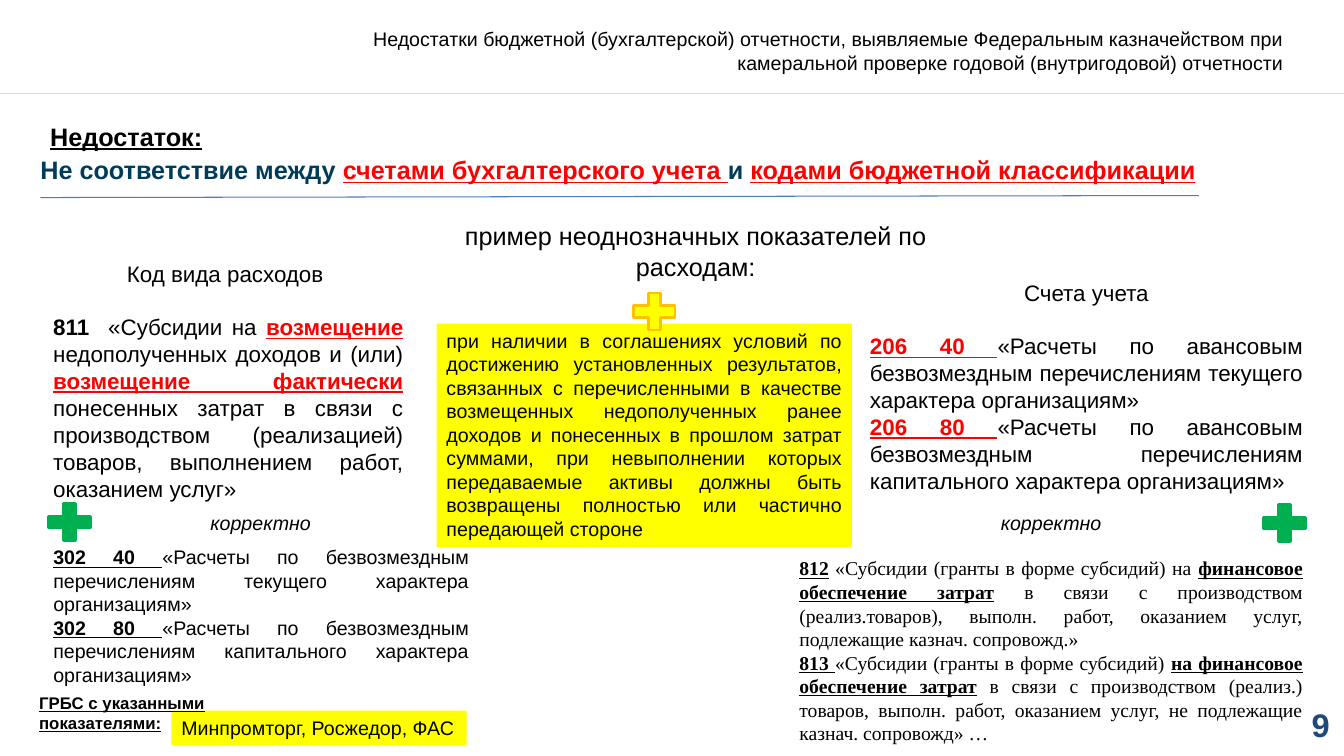
from lxml import etree
from pptx import Presentation
from pptx.dml.color import RGBColor
from pptx.enum import shapes, text
from pptx.oxml import ns
from pptx.util import Inches, Pt

COLORS = {"ink": "000000", "navy": "003B5A", "red": "FF0000", "number": "1F497D",
          "rule": "D9D9D9", "underline": "4B7EBC", "green": "00B050",
          "yellow": "FFFF00", "amber": "FFC000"}
# Run style: colour, bold, underline, italic
STYLES = {"plain": ("ink", False, False, False),
          "key": ("ink", True, True, False),
          "bold": ("ink", True, False, False),
          "red": ("red", True, True, False),
          "navy": ("navy", True, False, False),
          "number": ("number", True, False, False),
          "note": ("ink", False, False, True)}
LEFT, CENTER, RIGHT, JUSTIFY = (text.PP_ALIGN.LEFT, text.PP_ALIGN.CENTER,
                                text.PP_ALIGN.RIGHT, text.PP_ALIGN.JUSTIFY)


def color(name):
    return RGBColor.from_string(COLORS[name])


def place(shape, left, top, width, height):
    shape.left, shape.top = Inches(left), Inches(top)
    shape.width, shape.height = Inches(width), Inches(height)


def write(frame, paragraphs, size, align=LEFT, font="Arial", inset=True):
    """Fill a frame; each paragraph is a list of (words, style) pairs."""
    frame.word_wrap = True
    frame.auto_size = text.MSO_AUTO_SIZE.NONE
    frame.vertical_anchor = text.MSO_ANCHOR.TOP
    if not inset:
        frame.margin_left = frame.margin_right = 0
        frame.margin_top = frame.margin_bottom = 0
    for index, pieces in enumerate(paragraphs):
        paragraph = frame.paragraphs[0] if index == 0 else frame.add_paragraph()
        paragraph.alignment = align
        for words, style in pieces:
            run = paragraph.add_run()
            run.text = words
            tint, bold, underline, italic = STYLES[style]
            run.font.name, run.font.size = font, Pt(size)
            run.font.bold, run.font.underline, run.font.italic = bold, underline, italic
            run.font.color.rgb = color(tint)


def add_text(slide, box, paragraphs, size, **options):
    frame = slide.shapes.add_textbox(*map(Inches, box)).text_frame
    write(frame, paragraphs, size, **options)
    return frame


def add_headed_text(slide, box, heading, paragraphs):
    """Centred heading, a gap of one line, then justified paragraphs."""
    frame = add_text(slide, box, [[(heading, "plain")], *paragraphs], 16, align=JUSTIFY)
    frame.paragraphs[0].alignment = CENTER
    frame.paragraphs[1].space_before = Pt(19)


def add_highlight(slide, box, words, align=LEFT):
    panel = slide.shapes.add_shape(shapes.MSO_SHAPE.RECTANGLE, *map(Inches, box))
    panel.shadow.inherit = False
    panel.fill.solid()
    panel.fill.fore_color.rgb = color("yellow")
    panel.line.fill.background()
    write(panel.text_frame, [[(words, "plain")]], 14, align=align)


def add_plus(slide, left, top, fill, outline):
    plus = slide.shapes.add_shape(shapes.MSO_SHAPE.MATH_PLUS, Inches(left), Inches(top),
                                  Inches(0.56), Inches(0.5))
    plus.shadow.inherit = False
    plus.fill.solid()
    plus.fill.fore_color.rgb = color(fill)
    plus.line.color.rgb = color(outline)
    plus.line.width = Pt(2)


def add_rule(slide, start, end, tint, width):
    rule = slide.shapes.add_connector(shapes.MSO_CONNECTOR.STRAIGHT,
                                      *map(Inches, (*start, *end)))
    rule.line.color.rgb = color(tint)
    rule.line.width = Pt(width)
    etree.SubElement(rule._element.spPr, ns.qn("a:effectLst"))


def add_heading(slide):
    add_text(slide, (10.12, 6.99, 3.07, 0.39), [[("9", "number")]], 23.3,
             align=RIGHT, inset=False)
    title = slide.shapes.title
    place(title, 0.4, 1.53, 11.58, 0.42)
    write(title.text_frame, [[("Не соответствие между ", "navy"),
                              ("счетами бухгалтерского учета ", "red"),
                              ("и ", "navy"),
                              ("кодами бюджетной классификации", "red")]],
          18, align=JUSTIFY, inset=False)
    add_text(slide, (0.4, 1.15, 1.94, 0.4), [[("Недостаток:", "key")]], 18)
    add_rule(slide, (0.4, 1.96), (11.89, 1.94), "underline", 0.75)
    add_rule(slide, (0, 0.93), (13.33, 0.93), "rule", 1)
    add_text(slide, (3.4, 0.22, 9.43, 0.57),
             [[("Недостатки бюджетной (бухгалтерской) отчетности, выявляемые Федеральным "
                "казначейством при камеральной проверке годовой (внутригодовой) отчетности",
                "plain")]], 14, align=RIGHT)
    add_text(slide, (3.95, 2.14, 5.9, 0.71),
             [[("пример неоднозначных показателей по расходам:", "plain")]], 18, align=CENTER)


def add_expense_codes(slide):
    add_headed_text(slide, (0.43, 2.53, 3.67, 2.52), "Код вида расходов ", [
        [("811 ", "bold"), (" «Субсидии на ", "plain"), ("возмещение", "red"),
         (" недополученных доходов и (или) ", "plain"), ("возмещение фактически ", "red"),
         ("понесенных затрат в связи с производством (реализацией) товаров, "
          "выполнением работ, оказанием услуг»", "plain")]])
    add_text(slide, (7.83, 5.47, 5.19, 1.99), [
        [("812", "key"), (" «Субсидии (гранты в форме субсидий) на ", "plain"),
         ("финансовое обеспечение затрат", "key"),
         (" в связи с производством (реализ.товаров), выполн. работ, оказанием услуг, "
          "подлежащие казнач. сопровожд.»", "plain")],
        [("813 ", "key"), ("«Субсидии (гранты в форме субсидий) ", "plain"),
         ("на финансовое обеспечение затрат", "key"),
         (" в связи с производством (реализ.) товаров, выполн. работ, оказанием услуг, "
          "не подлежащие казнач. сопровожд» …", "plain")],
    ], 14, align=JUSTIFY, font="Times New Roman")


def account_lines(group, style, payment):
    """Entries for current (40) and capital (80) transfers of an account group."""
    return [[(f"{group} {code} ", style),
             (f"«Расчеты по {payment} перечислениям {nature} характера организациям»", "plain")]
            for code, nature in ((40, "текущего"), (80, "капитального"))]


def add_accounts(slide):
    add_headed_text(slide, (8.53, 2.72, 4.49, 2.26), "Счета учета",
                    account_lines(206, "red", "авансовым безвозмездным"))
    add_text(slide, (0.43, 5.36, 4.32, 1.51),
             account_lines(302, "key", "безвозмездным"), 14, align=JUSTIFY)


def add_marks(slide):
    for plus_left, plus_top, note_left in ((0.41, 4.93, 1.86), (12.46, 4.94, 9.7)):
        add_plus(slide, plus_left, plus_top, "green", "green")
        add_text(slide, (note_left, 5.02, 1.45, 0.34), [[("корректно", "note")]], 14,
                 align=CENTER)


def add_conditions(slide):
    add_highlight(slide, (1.7, 7.05, 2.93, 0.34), "Минпромторг, Росжедор, ФАС")
    add_text(slide, (0.29, 6.82, 2.54, 0.5),
             [[("ГРБС с указанными показателями:", "key")]], 12)
    add_highlight(slide, (4.33, 3.21, 4.12, 2.22),
                  "при наличии в соглашениях условий по достижению установленных результатов, "
                  "связанных с перечисленными в качестве возмещенных недополученных ранее "
                  "доходов и понесенных в прошлом затрат суммами, при невыполнении которых "
                  "передаваемые активы должны быть возвращены полностью или частично "
                  "передающей стороне", align=JUSTIFY)
    add_plus(slide, 6.21, 2.84, "yellow", "amber")


def main():
    deck = Presentation()
    deck.slide_width, deck.slide_height = Inches(13.33), Inches(7.5)
    slide = deck.slides.add_slide(deck.slide_layouts[5])
    add_heading(slide)
    add_expense_codes(slide)
    add_accounts(slide)
    add_marks(slide)
    add_conditions(slide)
    deck.save("out.pptx")


if __name__ == "__main__":
    main()
